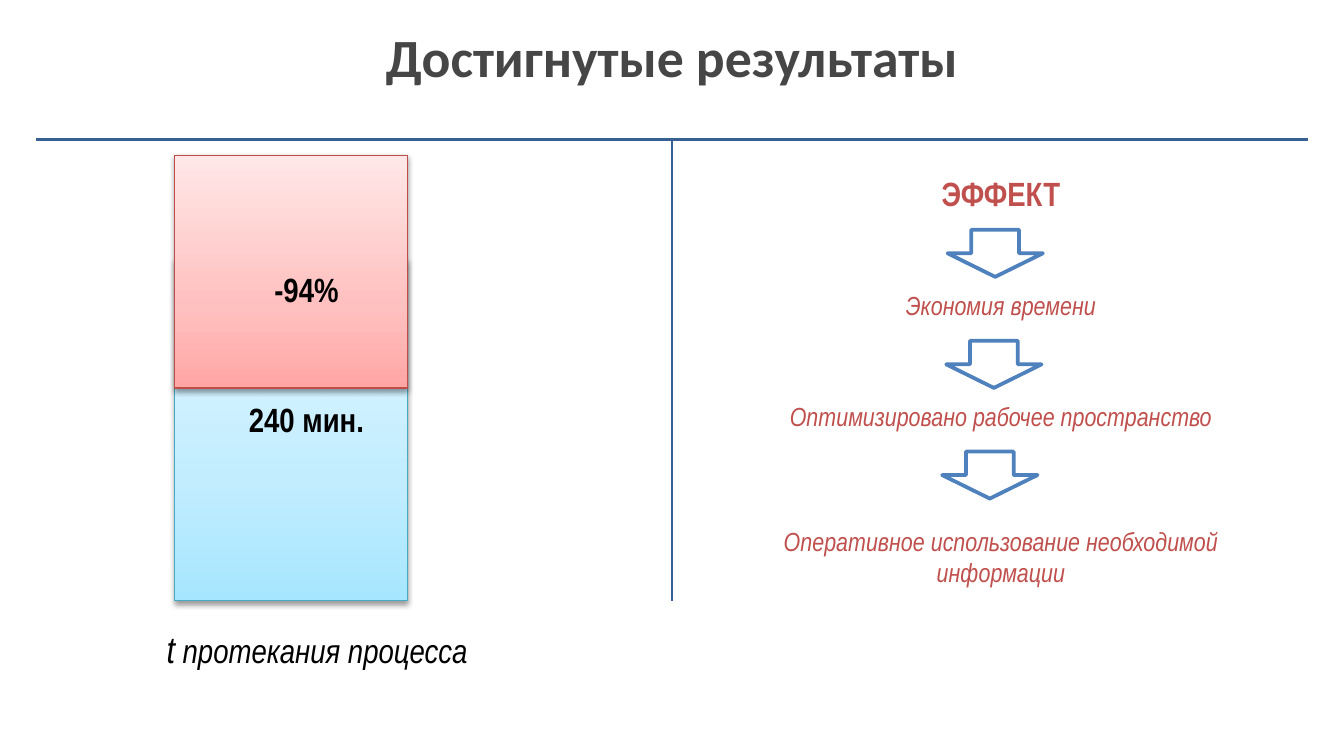
import copy

import pptx
import pptx.dml.color
import pptx.enum.shapes
import pptx.enum.text
import pptx.oxml
import pptx.oxml.ns
import pptx.util

Pt = pptx.util.Pt
RGB = pptx.dml.color.RGBColor.from_string
qn = pptx.oxml.ns.qn
SHAPE = pptx.enum.shapes.MSO_SHAPE
ANCHOR = pptx.enum.text.MSO_ANCHOR


class Theme:
    head, body = "Calibri", "Arial Narrow"
    dark, black, white = "464646", "000000", "FFFFFF"
    red, rule, arrow = "C0504D", "376092", "4F81BD"
    cool = ("A7E6FF", "C1EDFF", "E7F8FF"), "46AAC5"
    warm = ("FFA6A5", "FFC0BF", "FFE7E7"), "BF4C48"
    title, large, label, small = 28.8, 20, 18, 14


SHADOW = (
    f'<a:outerShdw {pptx.oxml.ns.nsdecls("a")} blurRad="{Pt(3.1)}" dist="{Pt(1.6)}" '
    f'dir="5400000" rotWithShape="0"><a:srgbClr val="{Theme.black}">'
    '<a:alpha val="38000"/></a:srgbClr></a:outerShdw>'
)


def add_box(left, top, width, height, anchor=ANCHOR.TOP):
    """Add a wrapping text box and return its text frame."""
    frame = slide.shapes.add_textbox(Pt(left), Pt(top), Pt(width), Pt(height)).text_frame
    frame.word_wrap = True
    frame.vertical_anchor = anchor
    return frame


def style(para, size, color, bold=False, italic=False, name=Theme.body):
    para.alignment = pptx.enum.text.PP_ALIGN.CENTER
    font = para.font
    font.name, font.size = name, Pt(size)
    font.bold, font.italic = bold, italic
    font.color.rgb = RGB(color)


deck = pptx.Presentation()
deck.slide_width, deck.slide_height = Pt(720), Pt(405)
slide = deck.slides.add_slide(deck.slide_layouts[6])

# Title
para = add_box(8.6, 10.8, 702.8, 38.2, ANCHOR.MIDDLE).paragraphs[0]
para.text = "Достигнутые результаты"
style(para, Theme.title, Theme.dark, bold=True, name=Theme.head)

# Rules below the title and between the halves
for x1, y1, x2, y2 in [(19.4, 74.9, 700.6, 74.9), (360, 74.9, 360, 321.8)]:
    line = slide.shapes.add_connector(
        pptx.enum.shapes.MSO_CONNECTOR.STRAIGHT, Pt(x1), Pt(y1), Pt(x2), Pt(y2))
    line.line.color.rgb = RGB(Theme.rule)
    line.line.width = Pt(1.5)
    pptx.oxml.ns  # namespace helpers used by the next line
    line._element.spPr.append(pptx.oxml.parse_xml(
        f'<a:effectLst {pptx.oxml.ns.nsdecls("a")}/>'))

# Stacked bar: the saved share overlaps the full time
for top, height, (tints, edge) in [(139, 182.9, Theme.cool), (83.3, 124.6, Theme.warm)]:
    bar = slide.shapes.add_shape(
        SHAPE.RECTANGLE, Pt(93.6), Pt(top), Pt(124.6), Pt(height))
    bar.line.color.rgb = RGB(edge)
    bar.line.width = Pt(0.75)
    bar.fill.gradient()
    bar.fill.gradient_angle = 90
    stops = bar._element.spPr.find(".//" + qn("a:gsLst"))
    stops.insert(1, copy.deepcopy(stops[0]))
    for stop, spot, tint in zip(bar.fill.gradient_stops, (0, 0.35, 1), tints):
        stop.position = spot
        stop.color.rgb = RGB(tint)
    bar.shadow.inherit = False
    bar._element.spPr.find(qn("a:effectLst")).append(pptx.oxml.parse_xml(SHADOW))

for text, top, height, anchor in [
    ("-94%", 96.5, 72.7, ANCHOR.BOTTOM),
    ("240 мин.", 210.2, 28.8, ANCHOR.TOP),
]:
    para = add_box(110.2, top, 108, height, anchor).paragraphs[0]
    para.text = text
    style(para, Theme.label, Theme.black, bold=True)

# Caption below the bar
para = add_box(76.3, 331.9, 187.2, 31.7).paragraphs[0]
style(para, Theme.label, Theme.black, italic=True)
run = para.add_run()
run.text = "t"
run.font.size = Pt(Theme.large)
para.add_run().text = " протекания процесса"

# Effects, with room for an arrow above each
frame = add_box(396.5, 89.3, 279.4, 254.2)
para = frame.paragraphs[0]
para.text = "ЭФФЕКТ"
style(para, Theme.label, Theme.red, bold=True)
for text, gap in [
    ("Экономия времени", 40.4),
    ("Оптимизировано рабочее пространство", 43),
    ("Оперативное использование необходимой информации", 50),
]:
    para = frame.add_paragraph()
    para.text = text
    para.space_before = Pt(gap)
    style(para, Theme.small, Theme.red, italic=True)

for left, top in [(507.6, 123.1), (506.9, 182.6), (504.7, 241.9)]:
    arrow = slide.shapes.add_shape(
        SHAPE.DOWN_ARROW, Pt(left), Pt(top), Pt(51.1), Pt(25.2))
    arrow.shadow.inherit = False
    arrow.fill.solid()
    arrow.fill.fore_color.rgb = RGB(Theme.white)
    arrow.line.color.rgb = RGB(Theme.arrow)
    arrow.line.width = Pt(2)

deck.save("out.pptx")
